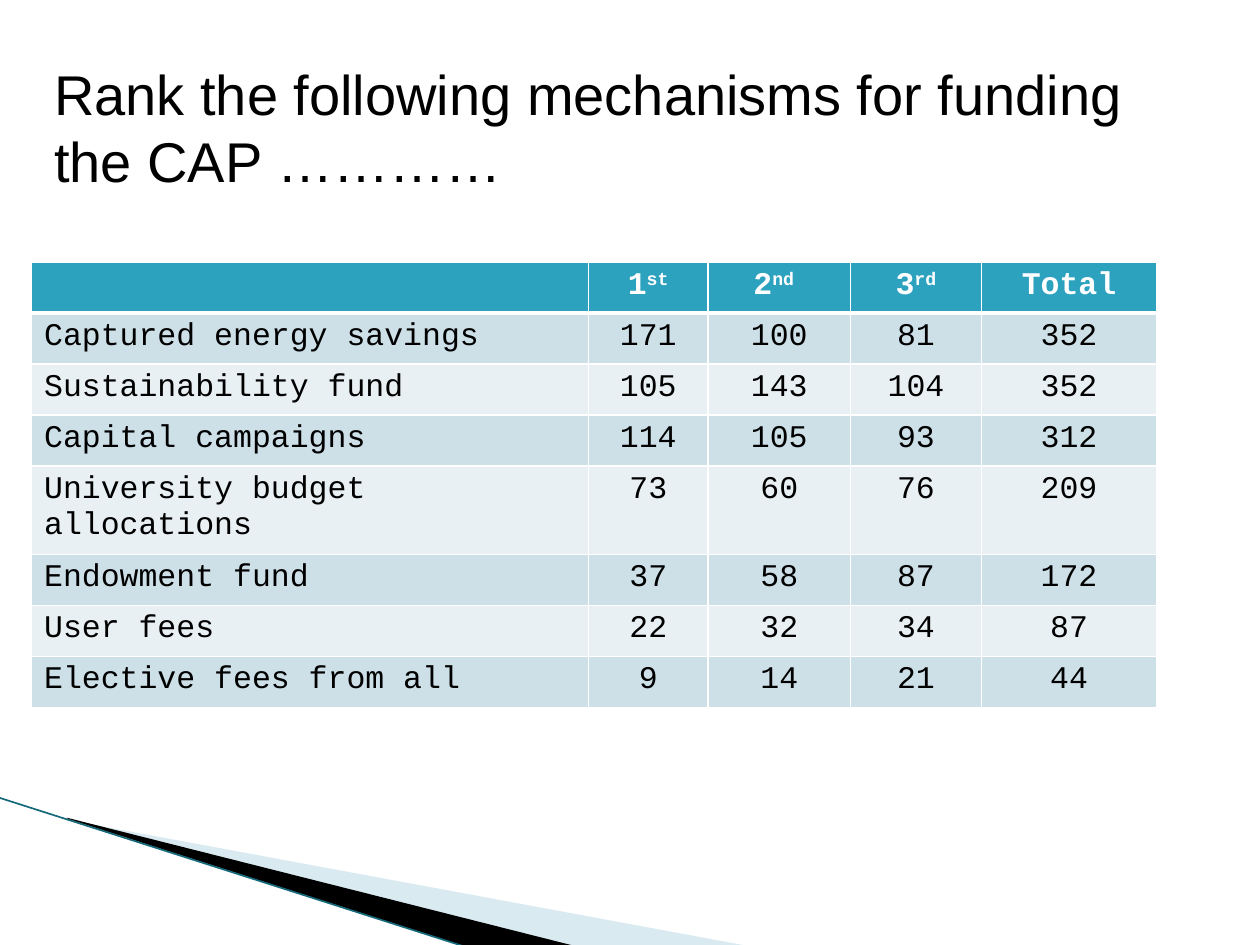
from lxml.etree import SubElement
from pptx import Presentation
from pptx.dml.color import RGBColor
from pptx.enum.shapes import MSO_CONNECTOR
from pptx.enum.text import MSO_ANCHOR, MSO_AUTO_SIZE, PP_ALIGN
from pptx.oxml.ns import qn
from pptx.util import Inches, Pt

WHITE = RGBColor(0xFF, 0xFF, 0xFF)
BLACK = RGBColor(0x00, 0x00, 0x00)
HEADER = RGBColor(0x2D, 0xA2, 0xBF)
BANDS = RGBColor(0xCD, 0xE0, 0xE8), RGBColor(0xE8, 0xF0, 0xF4)
PALE_BLUE = RGBColor(0xA0, 0xCB, 0xDC)
TEAL = RGBColor(0x16, 0x69, 0x7A)

COLUMNS = [4.42, 0.95, 1.13, 1.04, 1.39]
ROW_HEIGHT = 0.405
HEADINGS = [("", ""), ("1", "st"), ("2", "nd "), ("3", "rd"), ("Total", "")]
RANKS = [
    ("Captured energy savings", 171, 100, 81, 352),
    ("Sustainability fund", 105, 143, 104, 352),
    ("Capital campaigns", 114, 105, 93, 312),
    ("University budget allocations", 73, 60, 76, 209),
    ("Endowment fund", 37, 58, 87, 172),
    ("User fees", 22, 32, 34, 87),
    ("Elective fees from all", 9, 14, 21, 44),
]


def add_wedge(s, points, color, opacity=100):
    points = [(Inches(x), Inches(y)) for x, y in points]
    builder = s.shapes.build_freeform(*points[0])
    builder.add_line_segments(points[1:])
    sp = builder.convert_to_shape()
    sp.shadow.inherit = False
    sp.fill.solid()
    sp.fill.fore_color.rgb = color
    sp.line.fill.background()
    if opacity < 100:
        clr = sp.fill._xPr.find(qn("a:solidFill"))[0]
        SubElement(clr, qn("a:alpha"), val=str(opacity * 1000))


def add_line(s, start, end, color, width):
    ends = [Inches(v) for v in (*start, *end)]
    line = s.shapes.add_connector(MSO_CONNECTOR.STRAIGHT, *ends)
    line.line.color.rgb = color
    line.line.width = Pt(width)
    SubElement(line._element.spPr, qn("a:effectLst"))


def set_title(s, text):
    sp = s.shapes.title
    sp.left, sp.top, sp.width, sp.height = map(Inches, (0.33, 0.42, 9.17, 1.18))
    tf = sp.text_frame
    tf.text = text
    tf.word_wrap = True
    tf.auto_size = MSO_AUTO_SIZE.SHAPE_TO_FIT_TEXT
    tf.vertical_anchor = MSO_ANCHOR.TOP
    p = tf.paragraphs[0]
    p.alignment = PP_ALIGN.LEFT
    p.font.name = "Arial"
    p.font.size = Pt(32)
    p.font.color.rgb = BLACK


def set_borders(cell, bottom):
    tcPr = cell._tc.get_or_add_tcPr()
    widths = {"lnL": 1, "lnR": 1, "lnT": 1, "lnB": bottom}
    for i, (tag, width) in enumerate(widths.items()):
        ln = tcPr.makeelement(qn(f"a:{tag}"), {"w": str(Pt(width))})
        fill = SubElement(ln, qn("a:solidFill"))
        SubElement(fill, qn("a:srgbClr"), val=str(WHITE))
        tcPr.insert(i, ln)


def fill_cell(cell, text, suffix, fill, color, align, header):
    cell.fill.solid()
    cell.fill.fore_color.rgb = fill
    set_borders(cell, 3 if header else 1)
    p = cell.text_frame.paragraphs[0]
    p.alignment = align
    p.font.name = "Courier New"
    p.font.size = Pt(18)
    p.font.bold = header
    p.font.color.rgb = color
    if text:
        p.add_run().text = text
    if suffix:
        r = p.add_run()
        r.text = suffix
        r.font._element.set("baseline", "30000")


def add_rank_table(s):
    rows = [HEADINGS] + [[(str(v), "") for v in row] for row in RANKS]
    frame = s.shapes.add_table(
        len(rows), len(COLUMNS), Inches(0.25), Inches(2.08),
        Inches(sum(COLUMNS)), Inches(ROW_HEIGHT * len(rows)))
    table = frame.table
    for column, width in zip(table.columns, COLUMNS):
        column.width = Inches(width)
    for i, row in enumerate(rows):
        header = i == 0
        fill = HEADER if header else BANDS[(i - 1) % 2]
        color = WHITE if header else BLACK
        for j, (text, suffix) in enumerate(row):
            align = PP_ALIGN.CENTER if j else PP_ALIGN.LEFT
            fill_cell(table.cell(i, j), text, suffix, fill, color, align, header)


def main():
    prs = Presentation()
    prs.slide_width, prs.slide_height = Inches(10), Inches(7.5)
    s = prs.slides.add_slide(prs.slide_layouts[5])
    add_wedge(s, [(0.55, 6.51), (5.95, 7.51), (4.56, 7.51), (0.55, 6.5)], PALE_BLUE, 40)
    add_wedge(s, [(0.53, 6.49), (4.57, 7.51), (3.72, 7.52), (0.54, 6.5)], BLACK)
    add_line(s, (-0.01, 6.33), (3.71, 7.52), TEAL, 0.95)
    add_rank_table(s)
    set_title(s, "Rank the following mechanisms for funding the CAP …………")
    prs.save("out.pptx")


if __name__ == "__main__":
    main()
